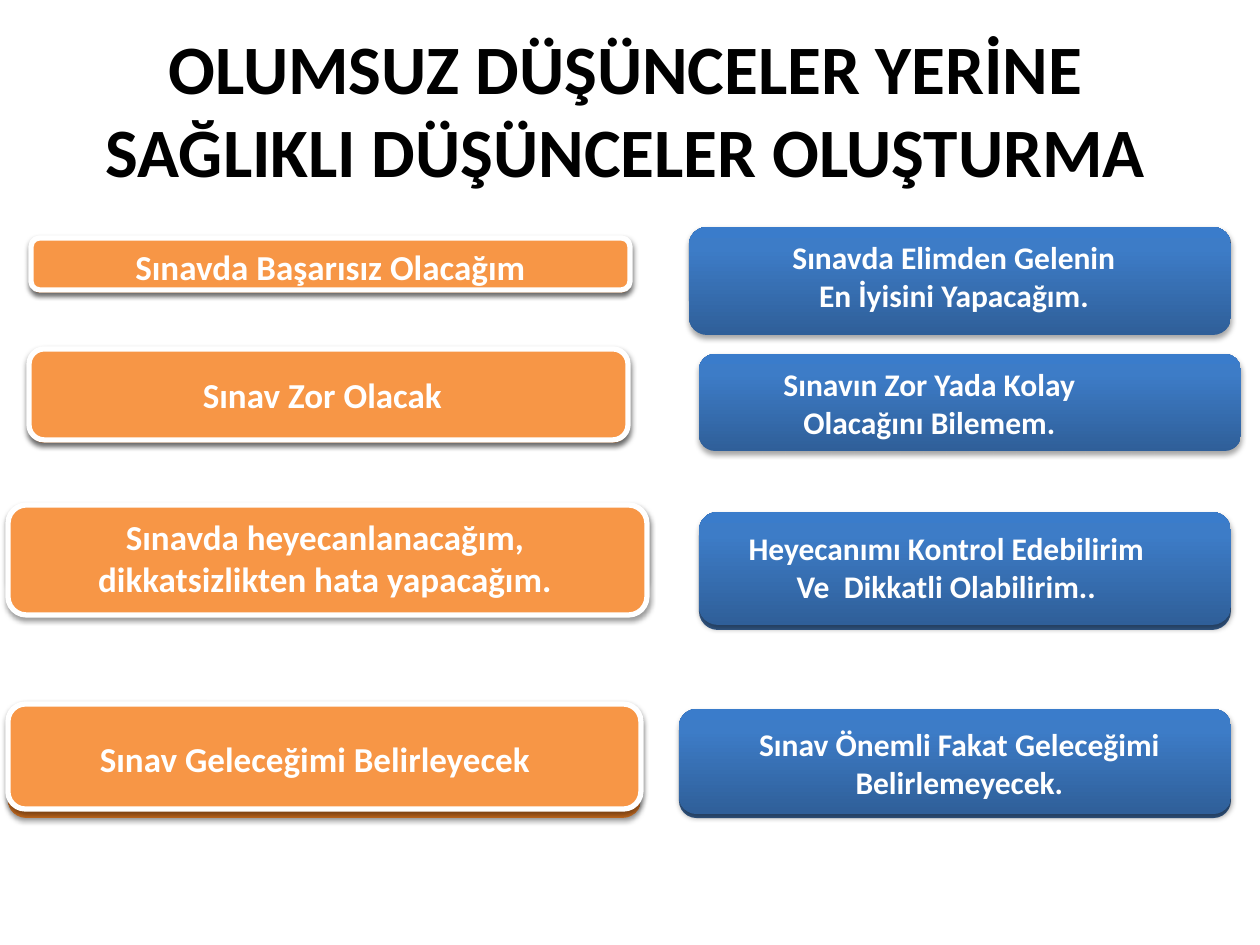
import copy
import dataclasses

import lxml.etree
import pptx
import pptx.dml.color
import pptx.enum.shapes
import pptx.enum.text
import pptx.oxml.ns
import pptx.util

SCALE = 914400 / 126
ROUND = pptx.enum.shapes.MSO_SHAPE.ROUNDED_RECTANGLE
ALIGN = pptx.enum.text.PP_ALIGN
ANCHOR = pptx.enum.text.MSO_ANCHOR


@dataclasses.dataclass(frozen=True)
class Theme:
    font: str = "Calibri"
    ink: str = "000000"
    white: str = "FFFFFF"
    orange: str = "F79646"
    navy: str = "376092"
    warm: tuple = ("CC6E20", "FF9034", "FF9136")
    cool: tuple = ("2F5F99", "3D7CC7", "3A7CCB")
    title: float = 39.6
    left: int = 20
    right: int = 18


THEME = Theme()


def px(num):
    return pptx.util.Emu(round(num * SCALE))


def rgb(code):
    return pptx.dml.color.RGBColor.from_string(code)


def write(shape, lines, size, color, anchor):
    frame = shape.text_frame
    frame.word_wrap = True
    frame.vertical_anchor = anchor
    frame.text = "\n".join(lines)
    for para in frame.paragraphs:
        para.alignment = ALIGN.CENTER
        para.font.name = THEME.font
        para.font.size = pptx.util.Pt(size)
        para.font.bold = True
        para.font.color.rgb = rgb(color)


def panel(group, box):
    shape = group.shapes.add_shape(ROUND, *map(px, box))
    shape.shadow.inherit = False
    shape.fill.background()
    shape.line.fill.background()
    return shape


def solid(group, box, color):
    shape = panel(group, box)
    shape.fill.solid()
    shape.fill.fore_color.rgb = rgb(color)
    return shape


def shade(shape, alpha, dist):
    qn = pptx.oxml.ns.qn
    effects = shape.element.spPr.find(qn("a:effectLst"))
    outer = lxml.etree.SubElement(
        effects, qn("a:outerShdw"), blurRad=str(pptx.util.Pt(3.1)),
        dist=str(pptx.util.Pt(dist)), dir="5400000", rotWithShape="0")
    color = lxml.etree.SubElement(outer, qn("a:srgbClr"), val=THEME.ink)
    lxml.etree.SubElement(color, qn("a:alpha"), val=str(alpha * 1000))


def blend(group, box, colors):
    shape = panel(group, box)
    shape.fill.gradient()
    shape.fill.gradient_angle = 90
    stops = shape.element.spPr.find(".//" + pptx.oxml.ns.qn("a:gsLst"))
    stops.append(copy.deepcopy(stops[-1]))
    for stop, color, place in zip(shape.fill.gradient_stops, colors, (0, 0.8, 1)):
        stop.color.rgb = rgb(color)
        stop.position = place
    shade(shape, 35, 1.8)


def label(group, box, lines, size):
    write(panel(group, box), lines, size, THEME.white, ANCHOR.TOP)


def worry(slide, back, front, area, lines):
    group = slide.shapes.add_group_shape()
    blend(group, back, THEME.warm)
    face = solid(group, front, THEME.orange)
    face.line.color.rgb = rgb(THEME.white)
    face.line.width = pptx.util.Pt(3)
    shade(face, 38, 1.6)
    label(group, area, lines, THEME.left)


def reply(slide, base, face, area, lines):
    group = slide.shapes.add_group_shape()
    if base:
        solid(group, base, THEME.navy)
    blend(group, face, THEME.cool)
    label(group, area, lines, THEME.right)


def heading(slide, box, line):
    shape = slide.shapes.add_textbox(*map(px, box))
    write(shape, [line], THEME.title, THEME.ink, ANCHOR.MIDDLE)


WORRIES = [
    ((31, 241, 599, 52), (31, 238, 599, 52), (77, 236, 507, 60),
     ["Sınavda Başarısız Olacağım"]),
    ((29, 352, 599, 91), (29, 349, 599, 91), (69, 364, 507, 60),
     ["Sınav Zor Olacak"]),
    ((8, 509, 639, 81), (8, 505, 639, 110), (0, 501, 650, 168),
     ["Sınavda heyecanlanacağım, dikkatsizlikten hata yapacağım."]),
    ((8, 708, 633, 110), (8, 704, 633, 105), (0, 728, 630, 60),
     ["Sınav Geleceğimi Belirleyecek"]),
]

REPLIES = [
    ((689, 229, 542, 86), (689, 227, 542, 108), (748, 227, 412, 98),
     ["Sınavda Elimden Gelenin", "En İyisini Yapacağım."]),
    (None, (699, 354, 542, 97), (740, 354, 379, 98),
     ["Sınavın Zor Yada Kolay Olacağını Bilemem."]),
    ((699, 517, 532, 113), (699, 512, 532, 113), (721, 518, 451, 98),
     ["Heyecanımı Kontrol Edebilirim Ve  Dikkatli Olabilirim.."]),
    ((679, 713, 552, 105), (679, 709, 552, 105), (737, 714, 445, 98),
     ["Sınav Önemli Fakat Geleceğimi", "Belirlemeyecek."]),
]


def main():
    deck = pptx.Presentation()
    deck.slide_width, deck.slide_height = px(1260), px(945)
    slide = deck.slides.add_slide(deck.slide_layouts[6])
    heading(slide, (59, 29, 1134, 158),
            "OLUMSUZ DÜŞÜNCELER YERİNE SAĞLIKLI DÜŞÜNCELER OLUŞTURMA")
    for left, right in zip(WORRIES, REPLIES):
        worry(slide, *left)
        reply(slide, *right)
    deck.save("out.pptx")


if __name__ == "__main__":
    main()
